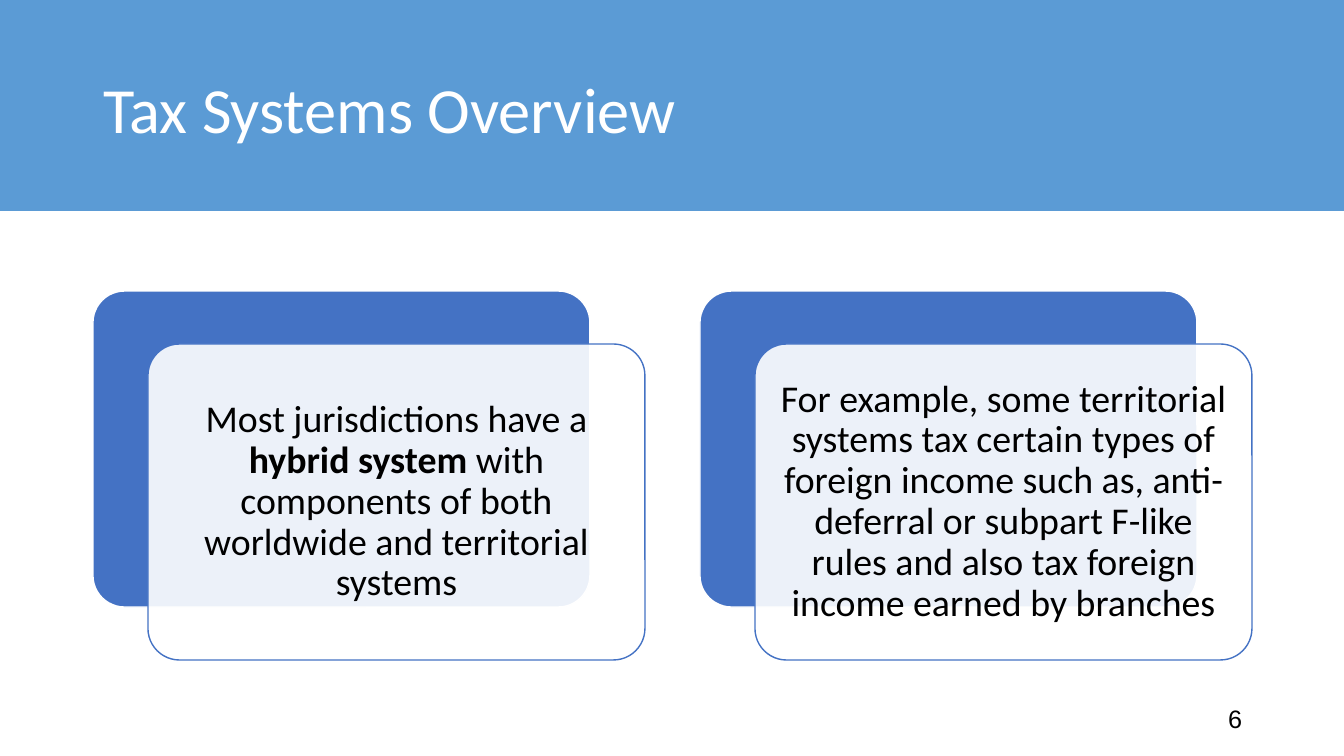
from dataclasses import dataclass

from lxml.etree import SubElement
from pptx import Presentation
from pptx.dml.color import RGBColor
from pptx.enum.shapes import MSO_SHAPE
from pptx.enum.text import MSO_ANCHOR, MSO_AUTO_SIZE, PP_ALIGN
from pptx.oxml.ns import qn
from pptx.util import Emu, Pt


@dataclass(frozen=True)
class Theme:
    band: RGBColor = RGBColor(0x5B, 0x9B, 0xD5)
    card: RGBColor = RGBColor(0x44, 0x72, 0xC4)
    white: RGBColor = RGBColor(0xFF, 0xFF, 0xFF)
    black: RGBColor = RGBColor(0x00, 0x00, 0x00)
    font: str = "Calibri"
    number_font: str = "Arial"
    title_size: int = 46
    card_size: int = 27
    number_size: int = 18


THEME = Theme()
EMU_PER_PX = 914400 / 100.8


def px(*lengths):
    return [Emu(round(length * EMU_PER_PX)) for length in lengths]


def write(frame, runs, font, size, color, align):
    """Fill a frame with one paragraph of (text, bold) runs."""
    frame.word_wrap = True
    frame.auto_size = MSO_AUTO_SIZE.NONE
    frame.vertical_anchor = MSO_ANCHOR.MIDDLE
    paragraph = frame.paragraphs[0]
    paragraph.alignment = align
    paragraph.line_spacing = 0.9
    for text, bold in runs:
        run = paragraph.add_run()
        run.text = text
        run.font.name = font
        run.font.size = Pt(size)
        run.font.bold = bold
        run.font.color.rgb = color


deck = Presentation()
deck.slide_width, deck.slide_height = px(1344, 756)
slide = deck.slides.add_slide(deck.slide_layouts[5])
shapes = slide.shapes

# Header band with the title in front of it
band = shapes.add_shape(MSO_SHAPE.RECTANGLE, *px(0, 0, 1344, 211))
band.shadow.inherit = False
band.fill.solid()
band.fill.fore_color.rgb = THEME.band
band.line.fill.background()

title = shapes.title
title.left, title.top, title.width, title.height = px(93, 40, 1159, 146)
write(title.text_frame, [("Tax Systems Overview", False)],
      THEME.font, THEME.title_size, THEME.white, PP_ALIGN.LEFT)
title.element.getparent().append(title.element)

# Cards: a solid back plate and a translucent front plate with the text
CARD_LEFT, CARD_TOP, CARD_STEP = 93, 291, 607
PLATE_WIDTH, PLATE_HEIGHT = 497, 316
SHIFT_X, SHIFT_Y = 55, 53
statements = [
    [("Most jurisdictions have a ", False),
     ("hybrid system ", True),
     ("with components of both worldwide and territorial systems", False)],
    [("For example, some territorial systems tax certain types of foreign "
      "income such as, anti-deferral or subpart F-like rules and also tax "
      "foreign income earned by branches", False)],
]
for column, statement in enumerate(statements):
    left = CARD_LEFT + column * CARD_STEP
    for layer, (fill, outline) in enumerate([(THEME.card, THEME.white),
                                             (THEME.white, THEME.card)]):
        plate = shapes.add_shape(
            MSO_SHAPE.ROUNDED_RECTANGLE,
            *px(left + layer * SHIFT_X, CARD_TOP + layer * SHIFT_Y,
                PLATE_WIDTH, PLATE_HEIGHT))
        plate.adjustments[0] = 0.1
        plate.shadow.inherit = False
        plate.fill.solid()
        plate.fill.fore_color.rgb = fill
        plate.line.color.rgb = outline
        plate.line.width = Pt(1)

    # The last plate is the front one
    fill_color = plate.element.spPr.find(qn("a:solidFill")).find(qn("a:srgbClr"))
    SubElement(fill_color, qn("a:alpha"), val="90000")
    frame = plate.text_frame
    (frame.margin_left, frame.margin_top,
     frame.margin_right, frame.margin_bottom) = px(11, 11, 11, 11)
    write(frame, statement, THEME.font, THEME.card_size, THEME.black, PP_ALIGN.CENTER)

# Page number
page_number = shapes.add_textbox(*px(950, 700, 302, 40))
write(page_number.text_frame, [("6", False)],
      THEME.number_font, THEME.number_size, THEME.black, PP_ALIGN.RIGHT)

deck.save("out.pptx")
